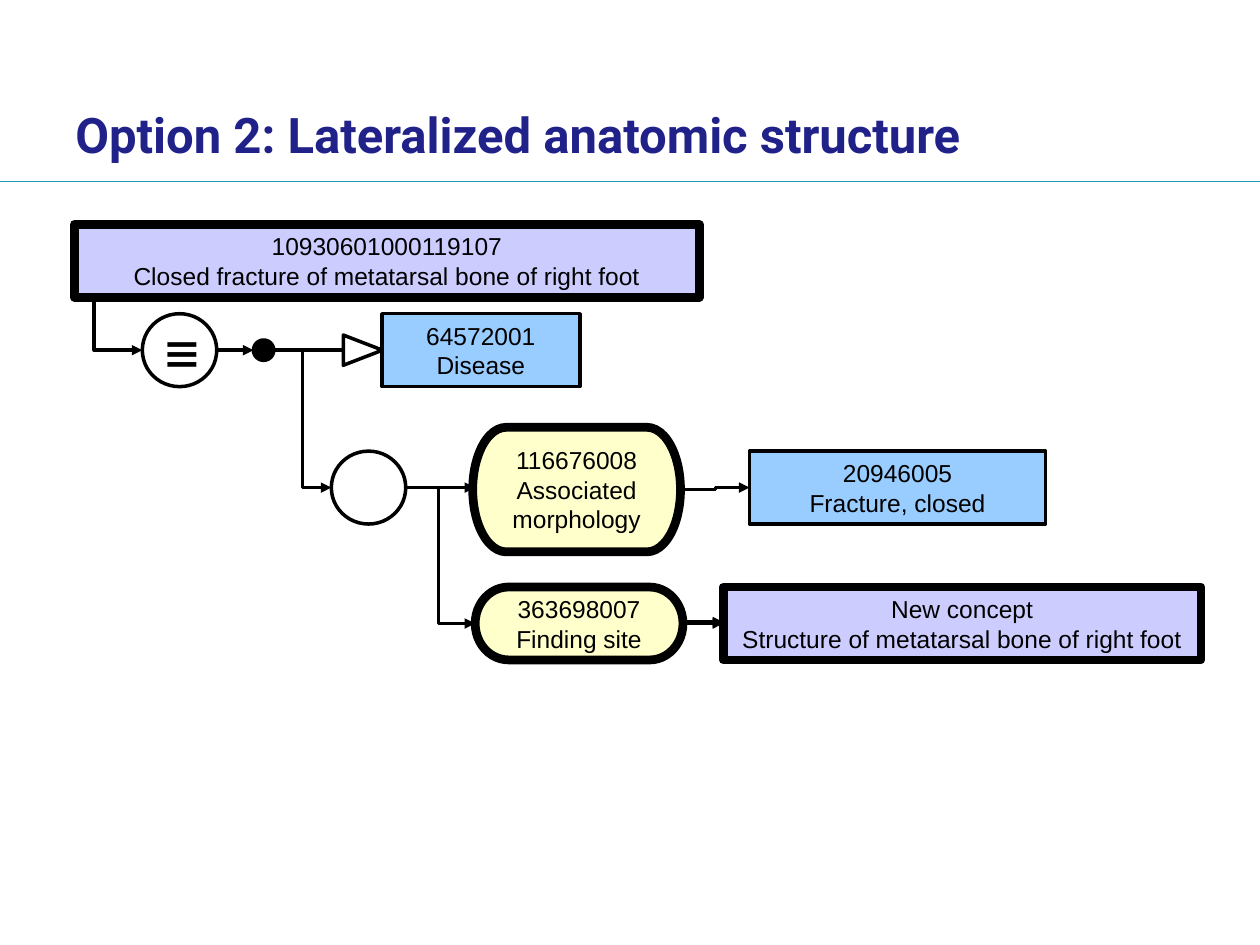
from lxml import etree
from pptx import Presentation
from pptx import util as u
from pptx.dml.color import RGBColor
from pptx.enum import shapes, text
from pptx.oxml.ns import qn

BLACK = RGBColor(0x00, 0x00, 0x00)
WHITE = RGBColor(0xFF, 0xFF, 0xFF)
NAVY = RGBColor(0x21, 0x21, 0x8A)
TEAL = RGBColor(0x22, 0x9B, 0xB8)
LILAC = RGBColor(0xCC, 0xCC, 0xFF)
CREAM = RGBColor(0xFF, 0xFF, 0xCC)
SKY = RGBColor(0x99, 0xCC, 0xFF)

RECT = shapes.MSO_SHAPE.RECTANGLE
PILL = shapes.MSO_SHAPE.FLOWCHART_TERMINATOR
CIRCLE = shapes.MSO_SHAPE.OVAL
TRIANGLE = shapes.MSO_SHAPE.ISOSCELES_TRIANGLE
STRAIGHT = shapes.MSO_CONNECTOR.STRAIGHT
ELBOW = shapes.MSO_CONNECTOR.ELBOW

# Vertical centres of the three diagram rows, and the common node height, in cm
PARENT_ROW, MORPHOLOGY_ROW, SITE_ROW = 7.06, 9.83, 12.57
ROW_HEIGHT = 1.47
CIRCLE_WIDTH = 1.5
THICK = 5


def write(frame, content, font="Arial", size=14, color=BLACK, bold=False,
          align=text.PP_ALIGN.CENTER):
    """Fill a text frame with one paragraph per line of content."""
    frame.word_wrap = True
    frame.auto_size = text.MSO_AUTO_SIZE.NONE
    frame.vertical_anchor = text.MSO_ANCHOR.MIDDLE
    for index, line in enumerate(content.split("\n")):
        para = frame.paragraphs[0] if index == 0 else frame.add_paragraph()
        para.alignment = align
        span = para.add_run()
        span.text = line
        span.font.name = font
        span.font.size = u.Pt(size)
        span.font.bold = bold
        span.font.color.rgb = color


class ConceptDiagram:
    def __init__(self, page, line_color=BLACK, line_width=2):
        self.page = page
        self.line_color = line_color
        self.line_width = line_width

    def title(self, content, left, top, width, height):
        box = self.page.shapes.title
        box.left, box.top = u.Cm(left), u.Cm(top)
        box.width, box.height = u.Cm(width), u.Cm(height)
        frame = box.text_frame
        frame.margin_left = frame.margin_right = u.Cm(0.25)
        frame.margin_top = frame.margin_bottom = u.Cm(0.25)
        write(frame, content, font="Roboto", size=28, color=NAVY, bold=True,
              align=text.PP_ALIGN.LEFT)

    def node(self, kind, left, middle, width, height=ROW_HEIGHT, fill=None,
             line_width=None, content="", **format):
        """Draw a shape centred vertically on middle."""
        box = self.page.shapes.add_shape(
            kind, u.Cm(left), u.Cm(middle - height / 2), u.Cm(width), u.Cm(height))
        box.shadow.inherit = False
        if fill is None:
            box.fill.background()
        else:
            box.fill.solid()
            box.fill.fore_color.rgb = fill
        box.line.color.rgb = self.line_color
        box.line.width = u.Pt(line_width or self.line_width)
        if content:
            write(box.text_frame, content, **format)
        return box

    def link(self, x1, y1, x2, y2, kind=STRAIGHT, arrow=True, color=None, width=None):
        line = self.page.shapes.add_connector(
            kind, u.Cm(x1), u.Cm(y1), u.Cm(x2), u.Cm(y2))
        line.line.color.rgb = color or self.line_color
        line.line.width = u.Pt(width or self.line_width)
        if arrow:
            etree.SubElement(line.line._get_or_add_ln(), qn("a:tailEnd"), type="triangle")
        etree.SubElement(line._element.spPr, qn("a:effectLst"))
        return line

    def corner(self, x1, y1, x2, y2):
        """Draw an arrow that goes down, then right, with a single bend."""
        center_x, center_y = (x1 + x2) / 2, (y1 + y2) / 2
        half_run, half_drop = (x2 - x1) / 2, (y2 - y1) / 2
        line = self.link(center_x + half_drop, center_y - half_run,
                         center_x - half_drop, center_y + half_run, ELBOW)
        properties = line._element.spPr
        properties.find(qn("a:xfrm")).set("rot", str(270 * 60000))
        properties.find(qn("a:prstGeom")).set("prst", "bentConnector2")


def main():
    deck = Presentation()
    deck.slide_width, deck.slide_height = u.Cm(25.4), u.Cm(19.05)
    page = deck.slides.add_slide(deck.slide_layouts[5])
    diagram = ConceptDiagram(page)

    diagram.link(0, 3.66, 25.4, 3.66, arrow=False, color=TEAL, width=0.75)
    diagram.title("Option 2: Lateralized anatomic structure", 1.27, 1.98, 19.81, 1.42)

    # Defined concept and its parent
    diagram.node(RECT, 1.5, 5.26, 12.6, fill=LILAC, line_width=THICK,
                 content="10930601000119107\nClosed fracture of metatarsal bone of right foot")
    diagram.node(CIRCLE, 2.87, PARENT_ROW, CIRCLE_WIDTH, fill=WHITE,
                 content="≡", font="DejaVu Sans Mono", size=32)
    diagram.node(CIRCLE, 5.11, PARENT_ROW, 0.41, 0.41, fill=BLACK)
    diagram.node(TRIANGLE, 7.01, PARENT_ROW, 0.61, 0.79).rotation = 90
    diagram.corner(1.9, 5.92, 2.87, PARENT_ROW)
    diagram.link(4.37, PARENT_ROW, 5.11, PARENT_ROW)
    diagram.link(5.51, PARENT_ROW, 6.91, PARENT_ROW, arrow=False)
    diagram.node(RECT, 7.7, PARENT_ROW, 3.99, fill=SKY, content="64572001\nDisease")

    # Role group with its two attributes
    diagram.node(CIRCLE, 6.68, MORPHOLOGY_ROW, CIRCLE_WIDTH, fill=WHITE)
    diagram.node(PILL, 9.53, 9.87, 4.19, 2.51, fill=CREAM, line_width=THICK,
                 content="116676008\nAssociated morphology")
    diagram.node(PILL, 9.58, SITE_ROW, 4.19, fill=CREAM, line_width=THICK,
                 content="363698007\nFinding site")
    diagram.link(5.51, PARENT_ROW, 6.68, MORPHOLOGY_ROW, ELBOW)
    diagram.link(8.18, MORPHOLOGY_ROW, 9.58, MORPHOLOGY_ROW, ELBOW)
    diagram.corner(8.84, MORPHOLOGY_ROW, 9.58, SITE_ROW)

    # Attribute values
    diagram.link(13.74, 9.87, 15.11, MORPHOLOGY_ROW, ELBOW)
    for y in (SITE_ROW, SITE_ROW - 0.03):
        diagram.link(13.77, y, 14.58, y, ELBOW)
    diagram.node(RECT, 15.11, MORPHOLOGY_ROW, 5.97, fill=SKY,
                 content="20946005\nFracture, closed")
    diagram.node(RECT, 14.58, SITE_ROW, 9.63, fill=LILAC, line_width=THICK,
                 content="New concept\nStructure of metatarsal bone of right foot")

    deck.save("out.pptx")


if __name__ == "__main__":
    main()
